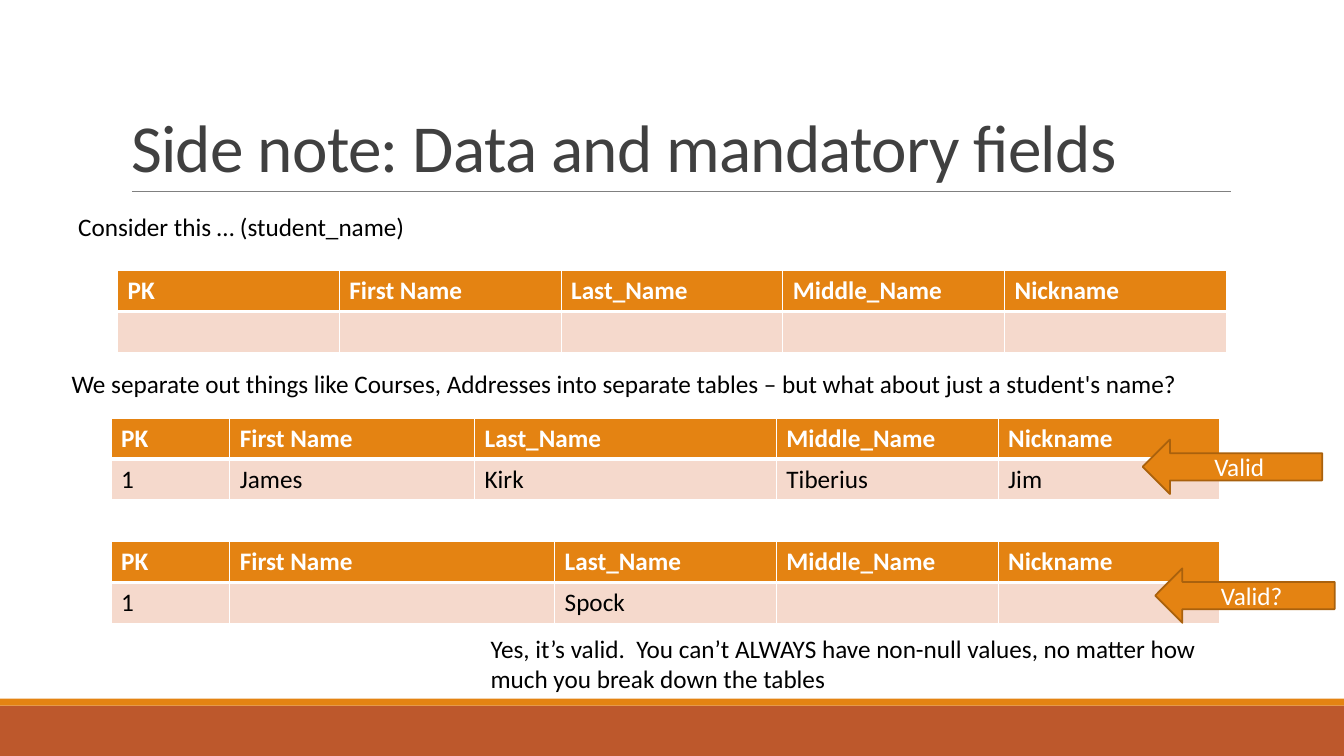
from dataclasses import dataclass

from lxml import etree
from pptx import Presentation
from pptx.dml.color import RGBColor
from pptx.enum.shapes import MSO_CONNECTOR, MSO_SHAPE
from pptx.enum.text import MSO_ANCHOR, MSO_AUTO_SIZE, PP_ALIGN
from pptx.oxml.ns import qn
from pptx.util import Pt

LEFT, CENTER = PP_ALIGN.LEFT, PP_ALIGN.CENTER
MIDDLE, BOTTOM = MSO_ANCHOR.MIDDLE, MSO_ANCHOR.BOTTOM
RECTANGLE, LEFT_ARROW = MSO_SHAPE.RECTANGLE, MSO_SHAPE.LEFT_ARROW
STRAIGHT = MSO_CONNECTOR.STRAIGHT
NO_AUTOFIT = MSO_AUTO_SIZE.NONE

FONT = "Calibri"
BODY_SIZE = 18
COLORS = {
    "orange": "E48312",
    "rust": "BD582C",
    "arrow_line": "A9610D",
    "row": "F5D9CC",
    "rule": "808080",
    "title": "404040",
    "black": "000000",
    "white": "FFFFFF",
}
HEADERS = ("PK", "First Name", "Last_Name", "Middle_Name", "Nickname")
ROW_HEIGHT = 29.2
ARROW_SIZE = (128.2, 38.9)


@dataclass
class Bar:
    top: float
    height: float
    color: str


@dataclass
class Note:
    left: float
    top: float
    width: float
    height: float
    text: str


@dataclass
class NameTable:
    left: float
    top: float
    widths: tuple[float, ...]
    values: tuple[str, ...]


@dataclass
class Arrow:
    left: float
    top: float
    text: str


BARS = [Bar(504, 36, "rust"), Bar(499, 5, "orange")]
NOTES = [
    Note(48.8, 147.6, 700, 29, "Consider this … (student_name)"),
    Note(44, 259.2, 855.4, 29,
         "We separate out things like Courses, Addresses into separate tables"
         " – but what about just a student's name?"),
    Note(343.4, 448.9, 556.6, 51,
         "Yes, it’s valid.  You can’t ALWAYS have non-null values,"
         " no matter how much you break down the tables"),
]
TABLES = [
    NameTable(84, 193.3, (158.4,) * 5, ("",) * 5),
    NameTable(79.4, 298.8, (84.7, 174.9, 215.6, 158.4, 158.4),
              ("1", "James", "Kirk", "Tiberius", "Jim")),
    NameTable(79.4, 386.8, (84.7, 232.1, 158.4, 158.4, 158.4),
              ("1", "", "Spock", "", "")),
]
ARROWS = [Arrow(816.2, 314, "Valid"), Arrow(825.1, 406, "Valid?")]


def rgb(name: str) -> RGBColor:
    return RGBColor.from_string(COLORS[name])


def add_run(paragraph, text: str, color: str, size: float = BODY_SIZE, bold: bool = False):
    run = paragraph.add_run()
    run.text = text
    run.font.name = FONT
    run.font.size = Pt(size)
    run.font.bold = bold
    run.font.color.rgb = rgb(color)
    return run


def add_bar(slide, bar: Bar, width: int) -> None:
    shape = slide.shapes.add_shape(RECTANGLE, 0, Pt(bar.top), width, Pt(bar.height))
    shape.shadow.inherit = False
    shape.fill.solid()
    shape.fill.fore_color.rgb = rgb(bar.color)
    shape.line.fill.background()


def add_title_rule(slide) -> None:
    rule = slide.shapes.add_connector(STRAIGHT, Pt(94.3), Pt(136.8), Pt(879), Pt(136.8))
    rule.line.color.rgb = rgb("rule")
    rule.line.width = Pt(0.5)
    etree.SubElement(rule._element.spPr, qn("a:effectLst"))


def fill_title(slide, text: str) -> None:
    title = slide.shapes.title
    title.left, title.top, title.width, title.height = Pt(86.4), Pt(22.3), Pt(792), Pt(114.5)
    frame = title.text_frame
    frame.word_wrap = True
    frame.auto_size = NO_AUTOFIT
    frame.vertical_anchor = BOTTOM
    paragraph = frame.paragraphs[0]
    paragraph.alignment = LEFT
    paragraph.line_spacing = 0.85
    run = add_run(paragraph, text, "title", size=48)
    run.font._element.set("spc", "-50")


def add_note(slide, note: Note) -> None:
    box = slide.shapes.add_textbox(Pt(note.left), Pt(note.top), Pt(note.width), Pt(note.height))
    box.text_frame.word_wrap = True
    add_run(box.text_frame.paragraphs[0], note.text, "black")


def add_border(cell, side: str, width: float) -> None:
    properties = cell._tc.get_or_add_tcPr()
    line = etree.SubElement(properties, qn(f"a:ln{side}"), w=str(Pt(width)))
    fill = etree.SubElement(line, qn("a:solidFill"))
    etree.SubElement(fill, qn("a:srgbClr"), val=COLORS["white"])


def fill_cell(cell, text: str, is_header: bool) -> None:
    # The thick white line lies between the header and the data row
    thick_side = "B" if is_header else "T"
    for side in "LRTB":
        add_border(cell, side, 3 if side == thick_side else 1)
    cell.fill.solid()
    cell.fill.fore_color.rgb = rgb("orange" if is_header else "row")
    if text:
        add_run(cell.text_frame.paragraphs[0], text,
                "white" if is_header else "black", bold=is_header)


def add_name_table(slide, spec: NameTable) -> None:
    rows = (HEADERS, spec.values)
    table = slide.shapes.add_table(
        len(rows), len(HEADERS), Pt(spec.left), Pt(spec.top),
        Pt(sum(spec.widths)), Pt(ROW_HEIGHT * len(rows))).table
    table.horz_banding = False
    for column, width in zip(table.columns, spec.widths):
        column.width = Pt(width)
    for row_index, values in enumerate(rows):
        table.rows[row_index].height = Pt(ROW_HEIGHT)
        for column_index, text in enumerate(values):
            fill_cell(table.cell(row_index, column_index), text, row_index == 0)


def add_arrow(slide, arrow: Arrow) -> None:
    width, height = ARROW_SIZE
    shape = slide.shapes.add_shape(
        LEFT_ARROW, Pt(arrow.left), Pt(arrow.top), Pt(width), Pt(height))
    shape.shadow.inherit = False
    shape.fill.solid()
    shape.fill.fore_color.rgb = rgb("orange")
    shape.line.color.rgb = rgb("arrow_line")
    shape.line.width = Pt(1.25)
    shape.text_frame.vertical_anchor = MIDDLE
    paragraph = shape.text_frame.paragraphs[0]
    paragraph.alignment = CENTER
    add_run(paragraph, arrow.text, "white")


def main() -> None:
    presentation = Presentation()
    presentation.slide_width, presentation.slide_height = Pt(960), Pt(540)
    slide = presentation.slides.add_slide(presentation.slide_layouts[5])

    # Footer bars, title and its rule
    for bar in BARS:
        add_bar(slide, bar, presentation.slide_width)
    add_title_rule(slide)
    fill_title(slide, "Side note: Data and mandatory fields")

    # Example tables with their notes and verdict arrows
    for spec in TABLES:
        add_name_table(slide, spec)
    for note in NOTES:
        add_note(slide, note)
    for arrow in ARROWS:
        add_arrow(slide, arrow)

    presentation.save("out.pptx")


if __name__ == "__main__":
    main()
